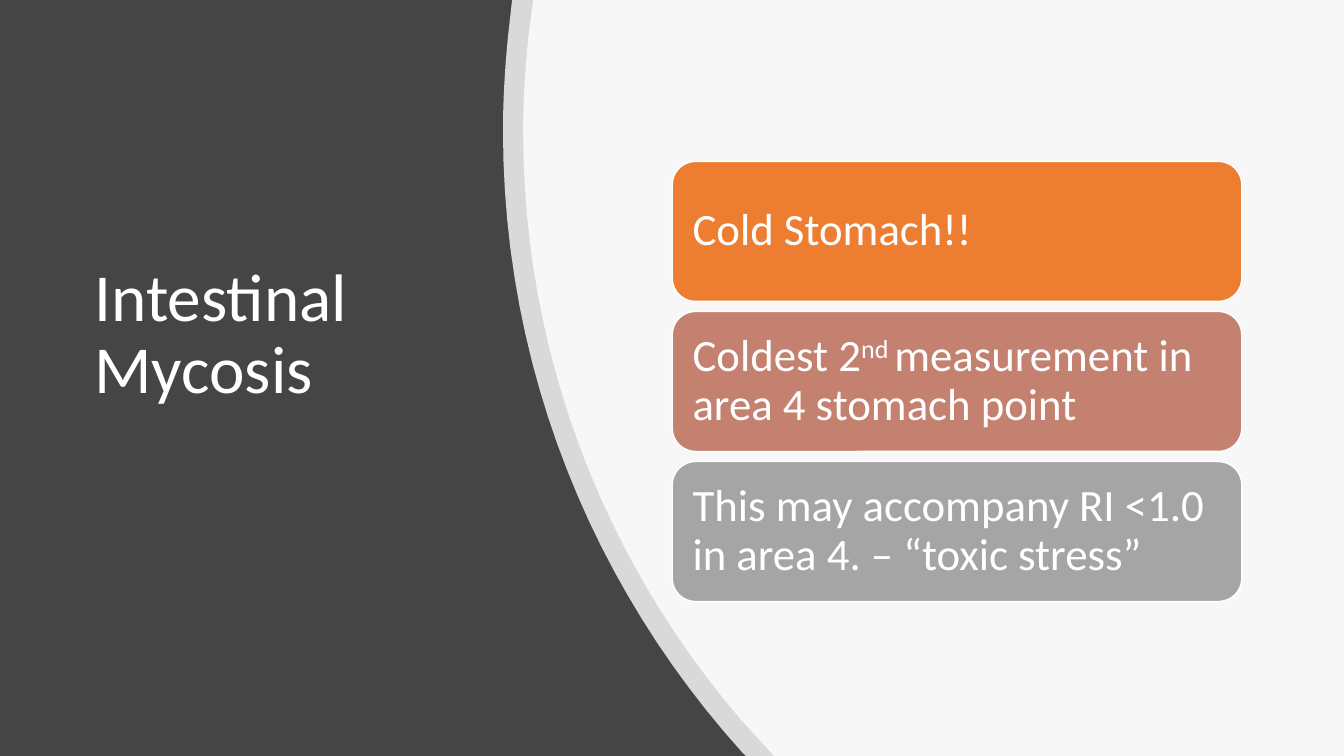
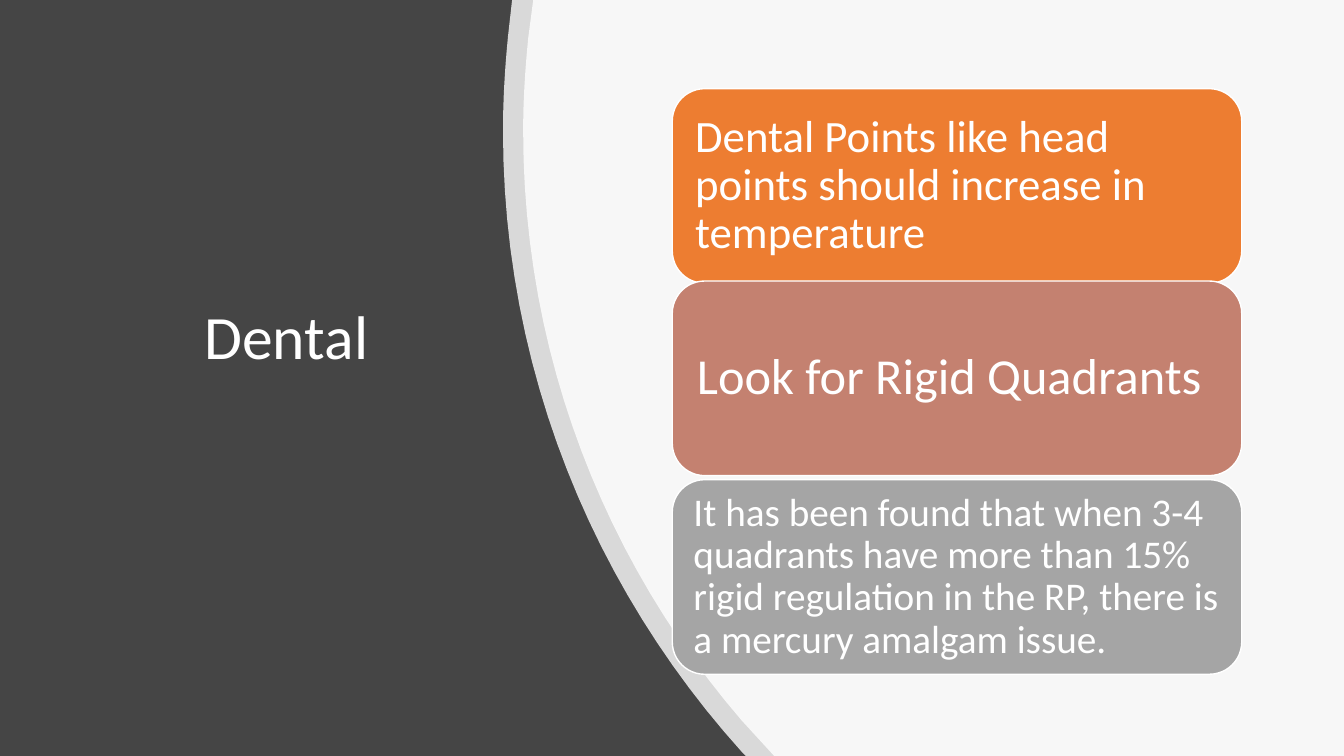
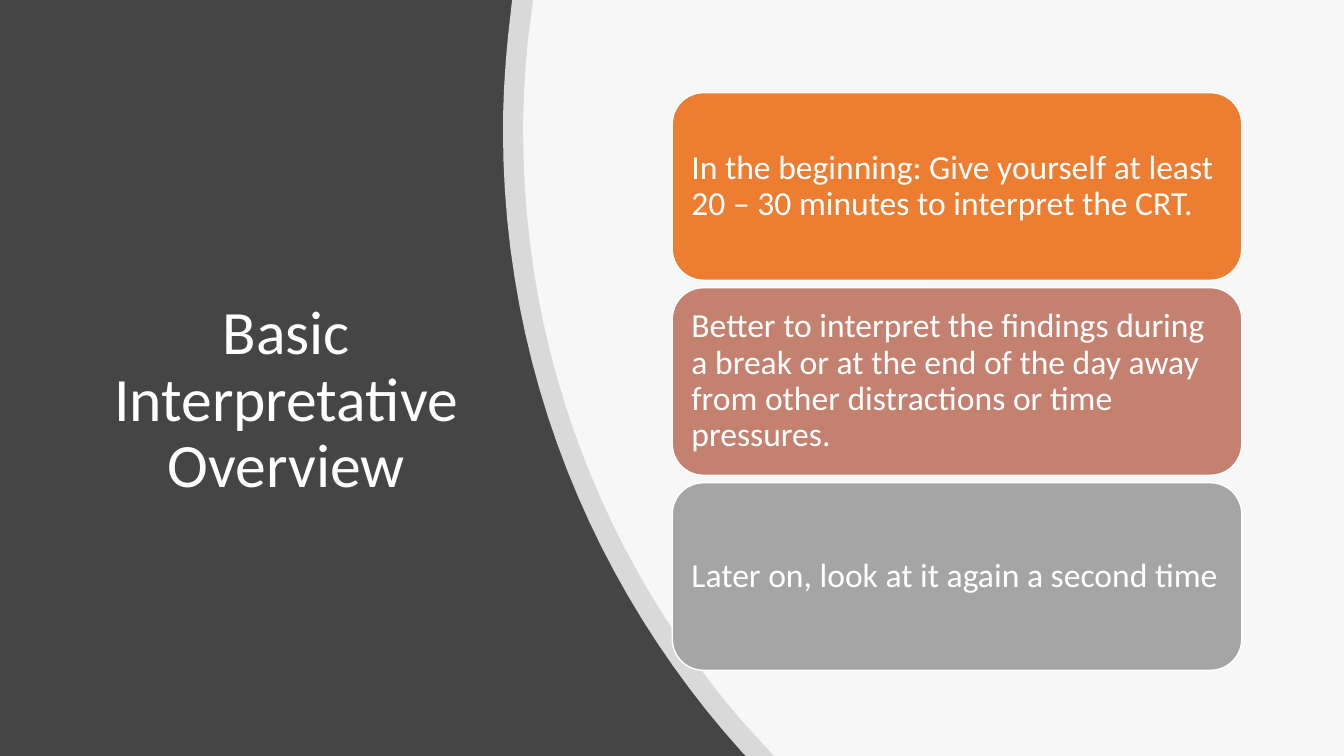
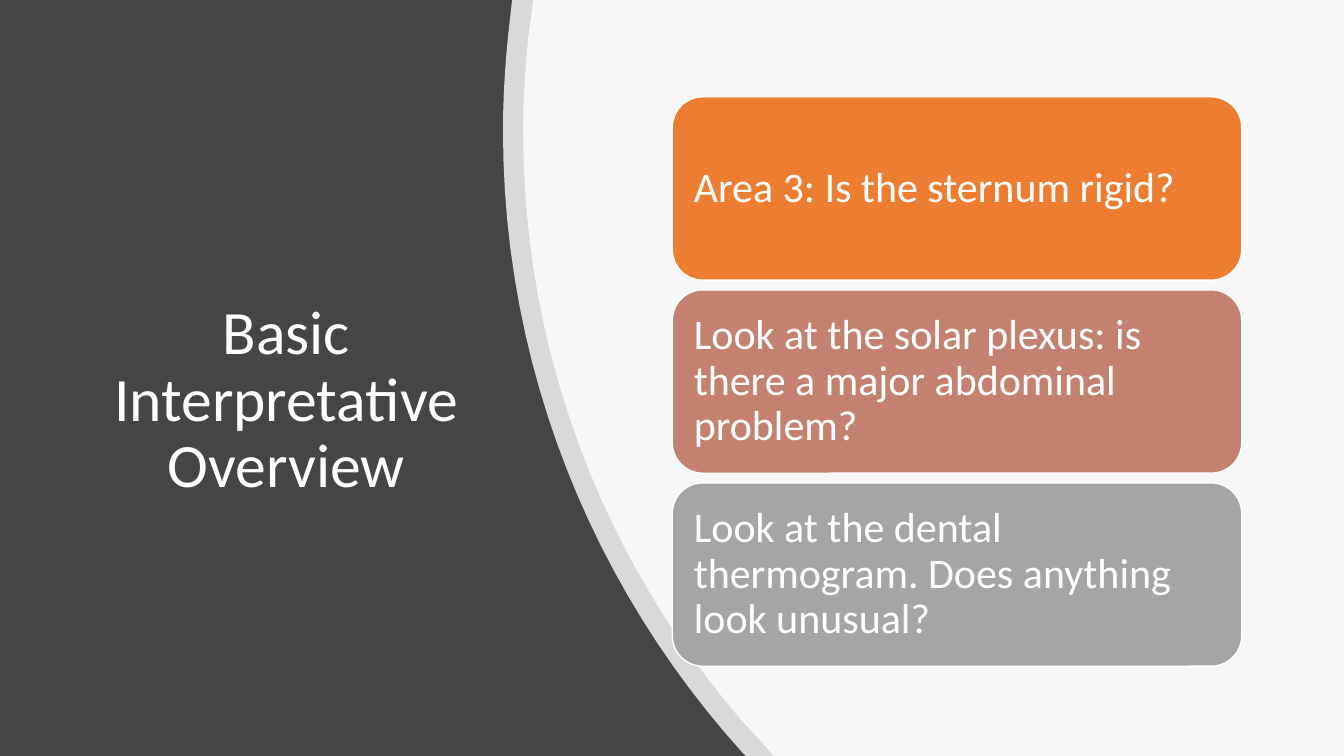
from dataclasses import dataclass

from pptx import Presentation
from pptx.dml.color import RGBColor
from pptx.enum import shapes, text
from pptx.oxml import xmlchemy
from pptx.oxml.ns import qn
from pptx.util import Pt
from lxml import etree


@dataclass(frozen=True)
class Theme:
    font: str = "Calibri"
    backdrop: str = "454545"
    white: str = "FFFFFF"
    cards: tuple = ("ED7D31", "C48170", "A5A5A5")
    band_alpha: int = 80
    line_spacing: float = 0.9
    inset_ratio: float = 0.3


THEME = Theme()
WIDTH, HEIGHT = 960, 540
CARD_LEFT, CARD_WIDTH = 480.2, 406.8
STACK_MIDDLE = 272.5
CURVE_STEPS = 24
LEFT, CENTER = text.PP_ALIGN.LEFT, text.PP_ALIGN.CENTER

BANDS = [
    {
        "edge": [(365.8, 0), (WIDTH, 0), (WIDTH, HEIGHT), (532.8, HEIGHT), (529.9, 537.1)],
        "curves": [
            [(424.1, 419.8), (359.3, 264.2), (359.3, 93.6)],
            [(359.3, 70.6), (360.7, 48.2), (362.9, 25.9)],
        ],
    },
    {
        "edge": [(380.9, 0), (WIDTH, 0), (WIDTH, HEIGHT), (553, HEIGHT), (529.9, 514.8)],
        "curves": [
            [(432.7, 401.8), (373.7, 254.9), (373.7, 93.6)],
            [(373.7, 71.3), (375.1, 49.7), (377.3, 27.4)],
        ],
    },
]

OVERVIEW = {
    "text": "Basic Interpretative Overview",
    "box": (63.4, 110.2, 282.2, 352.8),
    "size": 44,
    "align": CENTER,
}

SLIDES = [
    {
        "title": {
            "text": "Intestinal Mycosis",
            "box": (60.5, 63.4, 282.2, 352.8),
            "size": 48,
            "align": LEFT,
        },
        "height": 100,
        "gaps": (7.2, 7.2),
        "cards": [
            (32, ["Cold Stomach!!"]),
            (32, ["Coldest 2", "nd ", "measurement in area 4 stomach point"]),
            (32, ["This may accompany RI <1.0 in area 4. – “toxic stress”"]),
        ],
    },
    {
        "title": {
            "text": "Dental",
            "box": (63.4, 110.2, 282.2, 264.2),
            "size": 44,
            "align": CENTER,
        },
        "height": 139,
        "gaps": (-1.6, 2.9),
        "cards": [
            (32, ["Dental Points like head points should increase in temperature"]),
            (36, ["Look for Rigid Quadrants"]),
            (28, ["It has been found that when 3-4 quadrants have more than 15% "
                  "rigid regulation in the RP, there is a mercury amalgam issue."]),
        ],
    },
    {
        "title": OVERVIEW,
        "height": 134,
        "gaps": (5.3, 5.3),
        "cards": [
            (24, ["In the beginning: Give yourself at least 20 – 30 minutes "
                  "to interpret the CRT."]),
            (24, ["Better to interpret the findings during a break or at the end "
                  "of the day away from other distractions or time pressures."]),
            (24, ["Later on, look at it again a second time"]),
        ],
    },
    {
        "title": OVERVIEW,
        "height": 131,
        "gaps": (6.9, 6.9),
        "cards": [
            (30, ["Area 3: Is the sternum rigid?"]),
            (30, ["Look at the solar plexus: is there a major abdominal problem?"]),
            (30, ["Look at the dental thermogram. Does anything look unusual?"]),
        ],
    },
]


def paint(fill, color):
    fill.solid()
    fill.fore_color.rgb = RGBColor.from_string(color)


def write(sp, parts, size, align=LEFT):
    tf = sp.text_frame
    tf.word_wrap = True
    tf.vertical_anchor = text.MSO_ANCHOR.MIDDLE
    p = tf.paragraphs[0]
    p.alignment = align
    p.line_spacing = THEME.line_spacing
    for i, part in enumerate(parts):
        r = p.add_run()
        r.text = part
        r.font.name = THEME.font
        r.font.size = Pt(size)
        r.font.color.rgb = RGBColor.from_string(THEME.white)
        if i % 2:
            r.font._element.set("baseline", "30000")
    return tf


def curve_points(start, c1, c2, end):
    for step in range(1, CURVE_STEPS + 1):
        t = step / CURVE_STEPS
        weights = ((1 - t) ** 3, 3 * t * (1 - t) ** 2, 3 * t * t * (1 - t), t ** 3)
        yield tuple(
            sum(w * q[axis] for w, q in zip(weights, (start, c1, c2, end)))
            for axis in (0, 1)
        )


def add_band(s, band):
    points = list(band["edge"])
    for curve in band["curves"]:
        points.extend(curve_points(points[-1], *curve))
    points = [(Pt(x), Pt(y)) for x, y in points]
    builder = s.shapes.build_freeform(*points[0])
    builder.add_line_segments(points[1:], close=True)
    sp = builder.convert_to_shape()
    sp.shadow.inherit = False
    paint(sp.fill, THEME.white)
    sp.line.fill.background()
    color = sp._element.spPr.find(qn("a:solidFill"))[0]
    etree.SubElement(color, qn("a:alpha")).set("val", str(THEME.band_alpha * 1000))


def add_title(s, title):
    sp = s.shapes.add_textbox(*map(Pt, title["box"]))
    write(sp, [title["text"]], title["size"], title["align"])


def add_card(s, top, height, color, size, parts):
    sp = s.shapes.add_shape(
        shapes.MSO_SHAPE.ROUNDED_RECTANGLE,
        Pt(CARD_LEFT), Pt(top), Pt(CARD_WIDTH), Pt(height),
    )
    sp.shadow.inherit = False
    paint(sp.fill, color)
    paint(sp.line.fill, THEME.white)
    sp.line.width = Pt(1)
    tf = write(sp, parts, size)
    inset = Pt(size * THEME.inset_ratio)
    tf.margin_left = tf.margin_right = tf.margin_top = tf.margin_bottom = inset


def add_cards(s, content):
    height, gaps = content["height"], content["gaps"]
    top = STACK_MIDDLE - (3 * height + sum(gaps)) / 2
    for (size, parts), color, gap in zip(content["cards"], THEME.cards, (*gaps, 0)):
        add_card(s, top, height, color, size, parts)
        top += height + gap


def main():
    prs = Presentation()
    prs.slide_width, prs.slide_height = Pt(WIDTH), Pt(HEIGHT)
    paint(prs.slide_master.background.fill, THEME.backdrop)
    for content in SLIDES:
        s = prs.slides.add_slide(prs.slide_layouts[6])
        add_title(s, content["title"])
        for band in BANDS:
            add_band(s, band)
        add_cards(s, content)
    prs.save("out.pptx")


if __name__ == "__main__":
    main()
